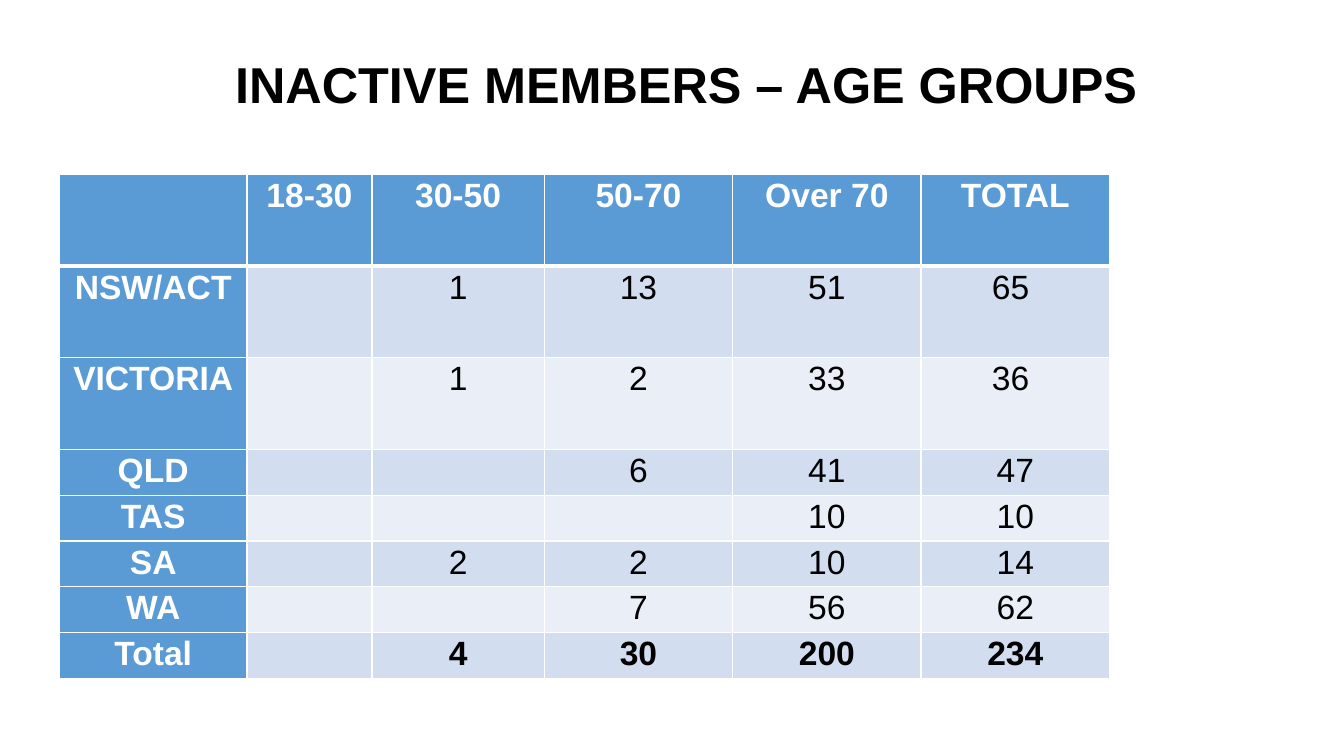
import dataclasses

import lxml.etree
import pptx
import pptx.dml.color
import pptx.enum.text
import pptx.oxml.ns
import pptx.util

Pt = pptx.util.Pt
RGB = pptx.dml.color.RGBColor.from_string


@dataclasses.dataclass(frozen=True)
class Theme:
    font: str = "Arial"
    title_size: int = 36
    table_size: int = 24
    ink: str = "000000"
    paper: str = "FFFFFF"
    accent: str = "5B9BD5"
    bands: tuple = ("D2DEEF", "EAEFF7")
    rule: int = 1
    header_rule: int = 3


THEME = Theme()

TITLE = "INACTIVE MEMBERS – AGE GROUPS"
MEMBERS = [
    ["", "18-30", "30-50", "50-70", "Over 70", "TOTAL"],
    ["NSW/ACT", "", "1", "13", "51", "65 "],
    ["VICTORIA", "", "1", "2", "33", "36 "],
    ["QLD", "", "", "6", "41", "47"],
    ["TAS", "", "", "", "10", "10"],
    ["SA", "", "2", "2", "10", "14"],
    ["WA", "", "", "7", "56", "62"],
    ["Total", "", "4", "30", "200", "234"],
]
COL_WIDTHS = [133.9, 89.3, 123.1] + [134.6] * 3
ROW_HEIGHTS = [65.5] * 3 + [32.7] * 5


def write_text(tf, text, *, size, color, bold=False, spacing=1.0):
    p = tf.paragraphs[0]
    p.alignment = pptx.enum.text.PP_ALIGN.CENTER
    p.line_spacing = spacing
    r = p.add_run()
    r.text = text
    r.font.name = THEME.font
    r.font.size = Pt(size)
    r.font.bold = bold
    r.font.color.rgb = RGB(color)


def add_border(cell, side, width):
    qn = pptx.oxml.ns.qn
    tcPr = cell._tc.get_or_add_tcPr()
    ln = lxml.etree.SubElement(tcPr, qn(f"a:ln{side}"), w=str(Pt(width)))
    fill = lxml.etree.SubElement(ln, qn("a:solidFill"))
    lxml.etree.SubElement(fill, qn("a:srgbClr"), val=THEME.paper)


def add_title(s, left, top, width, height):
    sp = s.shapes.add_textbox(Pt(left), Pt(top), Pt(width), Pt(height))
    tf = sp.text_frame
    tf.word_wrap = True
    tf.vertical_anchor = pptx.enum.text.MSO_ANCHOR.MIDDLE
    tf.margin_bottom = Pt(41)
    write_text(tf, TITLE, size=THEME.title_size, color=THEME.ink,
               bold=True, spacing=0.9)


def format_cell(cell, text, row, col):
    header = row == 0 or col == 0
    total = row == len(MEMBERS) - 1
    widths = {
        "L": THEME.rule,
        "R": THEME.rule,
        "T": THEME.header_rule if row == 1 else THEME.rule,
        "B": THEME.header_rule if row == 0 else THEME.rule,
    }
    for side, width in widths.items():
        add_border(cell, side, width)
    cell.fill.solid()
    cell.fill.fore_color.rgb = RGB(
        THEME.accent if header else THEME.bands[(row - 1) % 2])
    if text:
        cell.margin_left = cell.margin_right = Pt(5)
        cell.margin_top = cell.margin_bottom = Pt(0)
        write_text(cell.text_frame, text, size=THEME.table_size,
                   color=THEME.paper if header else THEME.ink,
                   bold=header or total, spacing=1.07)


def add_members_table(s, left, top, width, height):
    frame = s.shapes.add_table(len(MEMBERS), len(COL_WIDTHS),
                               Pt(left), Pt(top), Pt(width), Pt(height))
    table = frame.table
    table.first_col = True
    for column, w in zip(table.columns, COL_WIDTHS):
        column.width = Pt(w)
    for row, h in zip(table.rows, ROW_HEIGHTS):
        row.height = Pt(h)
    for i, values in enumerate(MEMBERS):
        for j, text in enumerate(values):
            format_cell(table.cell(i, j), text, i, j)


def main():
    prs = pptx.Presentation()
    prs.slide_width, prs.slide_height = Pt(960), Pt(540)
    s = prs.slides.add_slide(prs.slide_layouts[6])
    add_title(s, 76.3, 28.8, 828, 104.4)
    add_members_table(s, 42.5, 124.6, sum(COL_WIDTHS), sum(ROW_HEIGHTS))
    prs.save("out.pptx")


if __name__ == "__main__":
    main()
